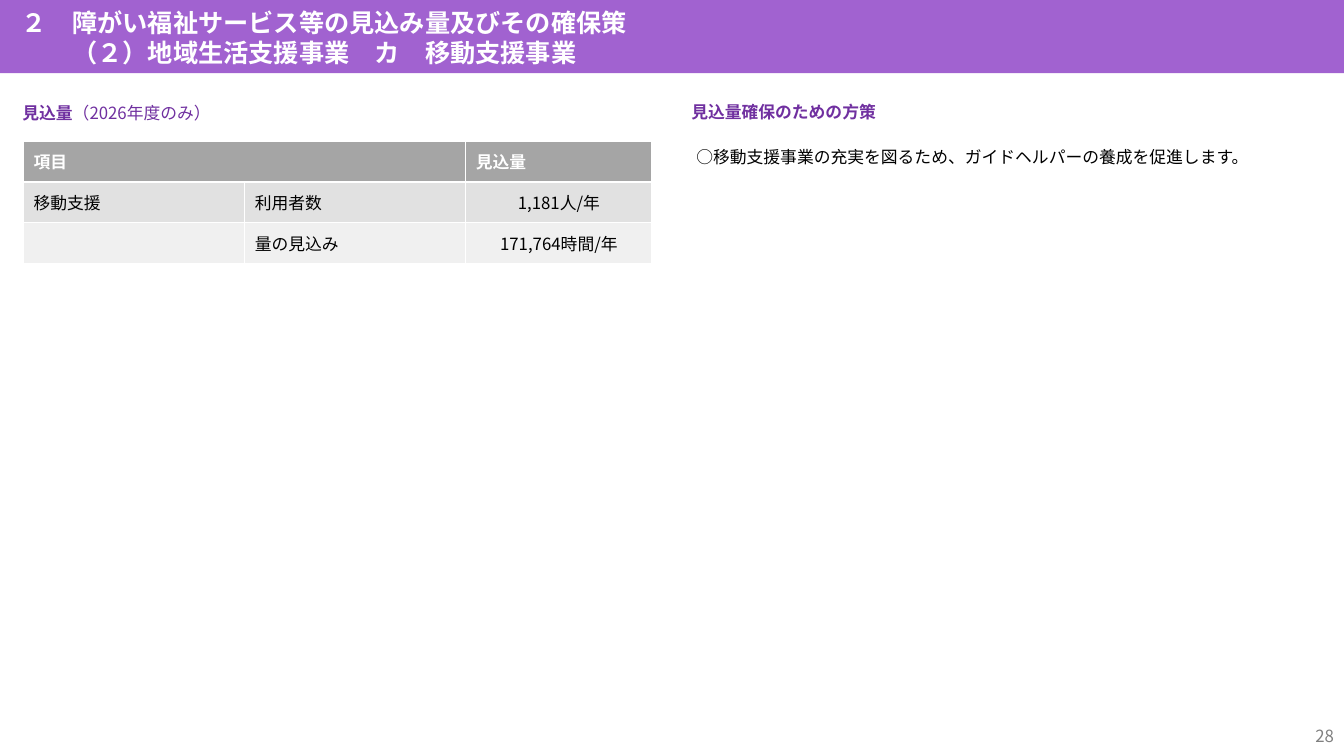
from lxml.etree import SubElement
from pptx import Presentation
from pptx.dml.color import RGBColor
from pptx.enum.shapes import MSO_SHAPE
from pptx.enum.text import MSO_ANCHOR, PP_ALIGN
from pptx.oxml.ns import qn
from pptx.util import Pt

FONT = "Noto Sans CJK JP"
BANNER = RGBColor(0xA1, 0x62, 0xD0)
PURPLE = RGBColor(0x70, 0x30, 0xA0)
WHITE = RGBColor(0xFF, 0xFF, 0xFF)
BLACK = RGBColor(0x00, 0x00, 0x00)
GREY = RGBColor(0x80, 0x80, 0x80)
HEADER = RGBColor(0xA5, 0xA5, 0xA5)
ROW_FILLS = [HEADER, RGBColor(0xE1, 0xE1, 0xE1), RGBColor(0xF0, 0xF0, 0xF0)]


class ServicePage:
    """Draws the elements of one plan page in a shared style."""

    def __init__(self, page, font_name=FONT, size=12):
        self.page = page
        self.font_name = font_name
        self.size = size

    def style(self, para, color, size=None, bold=None, align=PP_ALIGN.LEFT):
        para.alignment = align
        font = para.font
        font.size = Pt(size or self.size)
        font.bold = bold
        font.color.rgb = color
        font.name = self.font_name
        properties = para._p.get_or_add_pPr().find(qn("a:defRPr"))
        SubElement(properties, qn("a:ea")).set("typeface", self.font_name)

    def band(self, left, top, width, height, color):
        shape = self.page.shapes.add_shape(
            MSO_SHAPE.RECTANGLE, Pt(left), Pt(top), Pt(width), Pt(height))
        shape.shadow.inherit = False
        shape.fill.solid()
        shape.fill.fore_color.rgb = color
        shape.line.fill.background()

    def text(self, left, top, width, height, lines, color, size=None,
             align=PP_ALIGN.LEFT, anchor=MSO_ANCHOR.TOP):
        box = self.page.shapes.add_textbox(Pt(left), Pt(top), Pt(width), Pt(height))
        frame = box.text_frame
        frame.word_wrap = True
        frame.vertical_anchor = anchor
        for number, spans in enumerate(lines):
            para = frame.add_paragraph() if number else frame.paragraphs[0]
            for words, bold in spans:
                span = para.add_run()
                span.text = words
                span.font.bold = bold
            self.style(para, color, size, align=align)
        return frame

    def indent(self, para, first_line, tab):
        properties = para._p.get_or_add_pPr()
        properties.set("marL", "0")
        properties.set("indent", str(Pt(first_line)))
        stops = properties.makeelement(qn("a:tabLst"))
        SubElement(stops, qn("a:tab"), pos=str(Pt(tab)), algn="l")
        properties.insert(0, stops)

    def table(self, left, top, widths, row_height, rows):
        table = self.page.shapes.add_table(
            len(rows), len(widths), Pt(left), Pt(top),
            Pt(sum(widths)), Pt(row_height * len(rows))).table
        table.horz_banding = False
        for column, width in zip(table.columns, widths):
            column.width = Pt(width)
        for number, (values, fill) in enumerate(zip(rows, ROW_FILLS)):
            table.rows[number].height = Pt(row_height)
            heading = number == 0
            for position, value in enumerate(values):
                cell = table.cell(number, position)
                cell.fill.solid()
                cell.fill.fore_color.rgb = fill
                cell.vertical_anchor = MSO_ANCHOR.MIDDLE
                cell.text = value
                amount = position == len(widths) - 1 and not heading
                self.style(cell.text_frame.paragraphs[0],
                           WHITE if heading else BLACK, bold=heading,
                           align=PP_ALIGN.CENTER if amount else PP_ALIGN.LEFT)
        table.cell(0, 0).merge(table.cell(0, 1))


def main():
    """Build the mobility support page and save it."""
    deck = Presentation()
    deck.slide_width, deck.slide_height = Pt(960), Pt(540)
    page = ServicePage(deck.slides.add_slide(deck.slide_layouts[6]))

    page.band(0, 0, 960, 52.3, BANNER)
    title = page.text(8.6, 1.4, 941, 51, [
        [("２　障がい福祉サービス等の見込み量及びその確保策", True)],
        [("（２）地域生活支援事業\tカ　移動支援事業", True)],
    ], WHITE, size=18)
    page.indent(title.paragraphs[1], first_line=36, tab=270)

    page.text(486.7, 69.1, 413, 21.8, [[("見込量確保のための方策", True)]], PURPLE)
    page.text(8.9, 69.8, 413, 21.8,
              [[("見込量", True), ("（2026年度のみ）", False)]], PURPLE)
    page.text(490.3, 101.5, 459, 21.8, [
        [("○移動支援事業の充実を図るため、ガイドヘルパーの養成を促進します。", False)],
    ], BLACK)
    page.table(16.8, 100.8, [158, 158, 133], 29.2, [
        ["項目", "", "見込量"],
        ["移動支援", "利用者数", "1,181人/年"],
        ["", "量の見込み", "171,764時間/年"],
    ])
    page.text(744, 511.2, 216, 28.8, [[("28", False)]], GREY,
              align=PP_ALIGN.RIGHT, anchor=MSO_ANCHOR.MIDDLE)
    deck.save("out.pptx")


if __name__ == "__main__":
    main()
